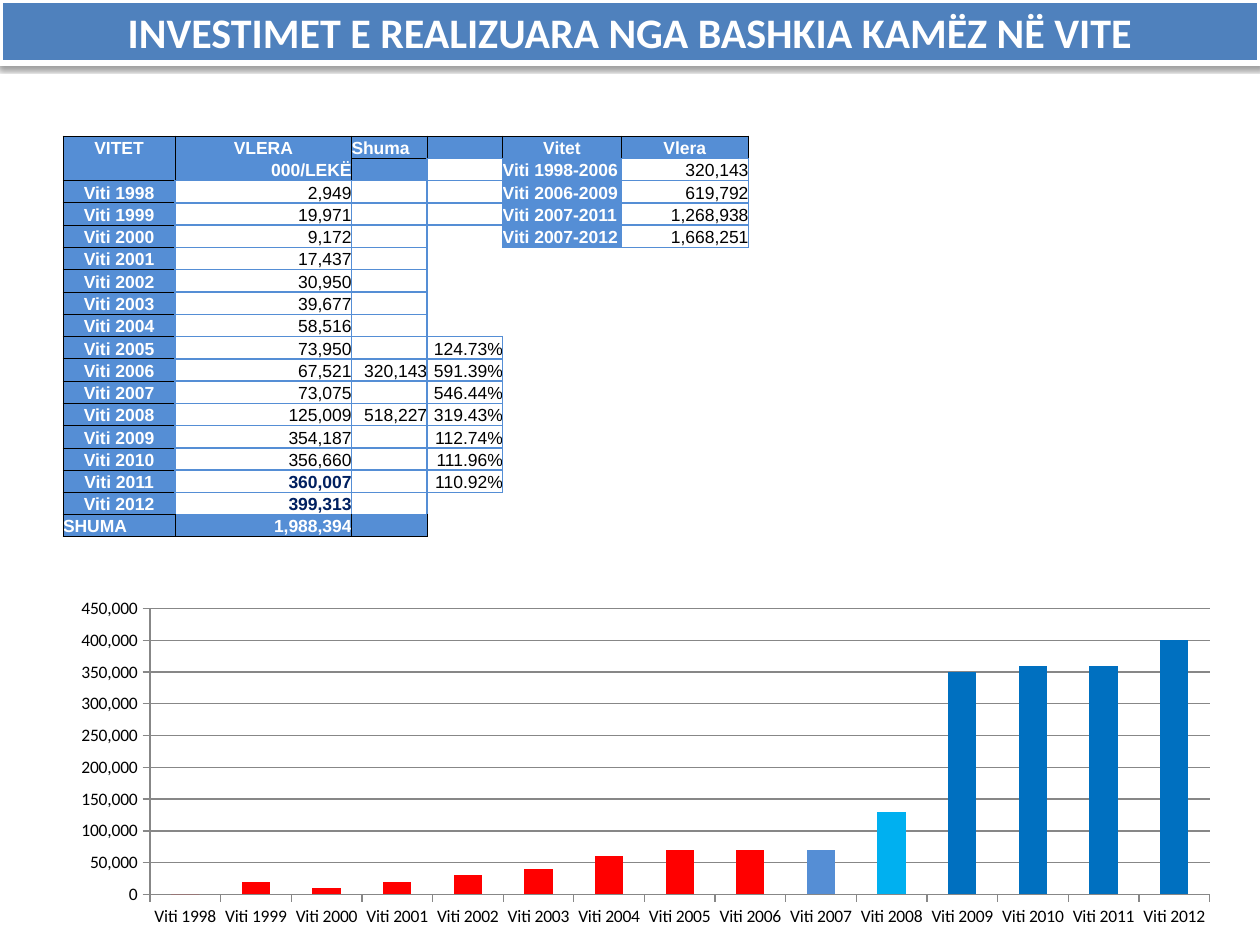
from lxml import etree
from pptx import Presentation
from pptx.chart.data import CategoryChartData
from pptx.dml.color import RGBColor
from pptx.enum.chart import XL_CHART_TYPE, XL_TICK_MARK
from pptx.enum.shapes import MSO_SHAPE
from pptx.enum.text import MSO_ANCHOR, MSO_AUTO_SIZE, PP_ALIGN
from pptx.oxml import parse_xml
from pptx.oxml.ns import nsdecls, qn
from pptx.util import Inches, Pt

WHITE = RGBColor(0xFF, 0xFF, 0xFF)
BLACK = RGBColor(0, 0, 0)
NAVY = RGBColor(0x00, 0x20, 0x60)
TITLE_BLUE = RGBColor(0x4F, 0x81, 0xBD)
TABLE_BLUE = RGBColor(0x55, 0x8E, 0xD5)
RED = RGBColor(0xFF, 0, 0)
SKY = RGBColor(0x00, 0xB0, 0xF0)
BLUE = RGBColor(0x00, 0x70, 0xC0)
GRAY = RGBColor(0x87, 0x87, 0x87)


def write_text(text_frame, text, size=10, font="Arial", color=BLACK, bold=False, align=PP_ALIGN.LEFT):
    paragraph = text_frame.paragraphs[0]
    paragraph.alignment = align
    if not text:
        end = etree.SubElement(paragraph._p, qn("a:endParaRPr"))
        end.set("sz", str(size * 100))
        return
    run = paragraph.add_run()
    run.text = text
    run.font.size = Pt(size)
    run.font.name = font
    run.font.bold = bold
    run.font.color.rgb = color


def set_borders(cell, edges):
    properties = cell._tc.get_or_add_tcPr()
    for position, side in enumerate(side for side in "LRTB" if side in edges):
        color = edges[side]
        width = Pt(0.5) if color == BLACK else Pt(1)
        paint = f'<a:solidFill><a:srgbClr val="{color}"/></a:solidFill>' if color else "<a:noFill/>"
        properties.insert(position, parse_xml(
            f'<a:ln{side} {nsdecls("a")} w="{width}">{paint}</a:ln{side}>'))


presentation = Presentation()
presentation.slide_width = Inches(10)
presentation.slide_height = Inches(7.5)
slide = presentation.slides.add_slide(presentation.slide_layouts[6])

values = [2949, 19971, 9172, 17437, 30950, 39677, 58516, 73950, 67521,
          73075, 125009, 354187, 356660, 360007, 399313]
years = [f"Viti {1998 + index}" for index in range(len(values))]
sums = {"Viti 2006": "320,143", "Viti 2008": "518,227"}
percents = ["124.73%", "591.39%", "546.44%", "319.43%", "112.74%", "111.96%", "110.92%"]
periods = [("Viti 1998-2006", "320,143"), ("Viti 2006-2009", "619,792"),
           ("Viti 2007-2011", "1,268,938"), ("Viti 2007-2012", "1,668,251")]

rows = [["VITET", "VLERA", "Shuma", "", "Vitet", "Vlera"], ["", "000/LEKË", "", "", "", ""]]
rows += [[year, f"{value:,}", sums.get(year, ""), "", "", ""] for year, value in zip(years, values)]
rows.append(["SHUMA", "1,988,394", "", "", "", ""])
for row, period in enumerate(periods, 1):
    rows[row][4:] = period
for row, percent in enumerate(percents, 9):
    rows[row][3] = percent
last = len(rows) - 1

table_frame = slide.shapes.add_table(len(rows), 6, Inches(0.5), Inches(1.08), Inches(5.44), Inches(3.18))
table = table_frame.table
table.first_row = False
table.horz_banding = False
style = table._tbl.tblPr.find(qn("a:tableStyleId"))
style.text = "{2D5ABB26-0587-4C30-8999-92F81FD0307C}"
for column, width in zip(table.columns, (0.89, 1.4, 0.6, 0.6, 0.94, 1.01)):
    column.width = Inches(width)
for table_row in table.rows:
    table_row.height = Inches(3.01) // last
table.rows[last].height = Inches(0.17)

for row, texts in enumerate(rows):
    for column, text in enumerate(texts):
        cell = table.cell(row, column)
        cell.margin_left = cell.margin_right = cell.margin_top = cell.margin_bottom = 0
        cell.vertical_anchor = MSO_ANCHOR.BOTTOM
        boxed = column < 3 or row < 5 or (column == 3 and 9 <= row <= 15)
        heading = boxed and (row in (0, last) or column == 0
                             or (row == 1 and column < 3) or column == 4)
        latest = column == 1 and row in (15, 16)

        if (column == 0 and row < last) or (row == 0 and column != 2):
            align = PP_ALIGN.CENTER
        elif column == 4 or row == 0 or column == 0:
            align = PP_ALIGN.LEFT
        else:
            align = PP_ALIGN.RIGHT
        color = WHITE if heading else NAVY if latest else BLACK
        write_text(cell.text_frame, text, color=color, bold=heading or latest, align=align)

        if heading:
            cell.fill.solid()
            cell.fill.fore_color.rgb = TABLE_BLUE
        elif boxed and (column in (1, 5) or text.endswith("%")):
            cell.fill.solid()
            cell.fill.fore_color.rgb = WHITE
        else:
            cell.fill.background()

        if not boxed:
            continue
        dark = row in (0, last) or column == 0 or (row == 1 and column < 3)
        edges = dict.fromkeys("LRTB", BLACK if dark else TABLE_BLUE)
        if row == 0:
            if column < 2:
                del edges["B"]
            elif column > 2:
                edges["B"] = TABLE_BLUE
        elif row == 1 and column < 2:
            del edges["T"]
        if row == 1 and column in (1, 2):
            edges["B"] = TABLE_BLUE
        if (row == 1 and column == 2) or (column == 0 and 2 <= row < last):
            edges["R"] = TABLE_BLUE
        if row == last and column:
            edges["T"] = TABLE_BLUE
        if (row, column) == (4, 3):
            edges["B"] = None
        set_borders(cell, edges)

chart_width, chart_height = 9.22, 2.83
chart_data = CategoryChartData(number_format="#,##0")
chart_data.categories = years
chart_data.add_series("Series 1", [round(value, -4) for value in values])
chart = slide.shapes.add_chart(XL_CHART_TYPE.COLUMN_STACKED, Inches(0.42), Inches(4.67),
                               Inches(chart_width), Inches(chart_height), chart_data).chart
chart.has_legend = False
chart.has_title = False
chart.font.size = Pt(10)
chart.font.name = "Calibri"
chart.font.color.rgb = BLACK
plot = chart.plots[0]
plot.vary_by_categories = False
plot.gap_width = 150
plot.overlap = 100
series = plot.series[0]
series.format.fill.solid()
series.format.fill.fore_color.rgb = RED
for index, color in enumerate((TABLE_BLUE, SKY, BLUE, BLUE, BLUE, BLUE), 9):
    fill = series.points[index].format.fill
    fill.solid()
    fill.fore_color.rgb = color
for axis in (chart.category_axis, chart.value_axis):
    axis.major_tick_mark = XL_TICK_MARK.OUTSIDE
    axis.format.line.color.rgb = GRAY
value_axis = chart.value_axis
value_axis.minimum_scale = 0
value_axis.maximum_scale = 450000
value_axis.major_unit = 50000
value_axis.tick_labels.number_format = "#,##0"
value_axis.tick_labels.number_format_is_linked = False
value_axis.has_major_gridlines = True
value_axis.major_gridlines.format.line.color.rgb = GRAY

plot_area = chart._chartSpace.chart.plotArea
for old_layout in plot_area.findall(qn("c:layout")):
    plot_area.remove(old_layout)
plot_area.insert(0, parse_xml(
    f'<c:layout {nsdecls("c")}><c:manualLayout><c:layoutTarget val="inner"/>'
    '<c:xMode val="edge"/><c:yMode val="edge"/>'
    f'<c:x val="{0.77 / chart_width}"/><c:y val="{0.16 / chart_height}"/>'
    f'<c:w val="{8.41 / chart_width}"/><c:h val="{2.27 / chart_height}"/>'
    '</c:manualLayout></c:layout>'))

title = slide.shapes.add_shape(MSO_SHAPE.RECTANGLE, 0, 0, Inches(10), Inches(0.5))
title.fill.solid()
title.fill.fore_color.rgb = TITLE_BLUE
title.line.color.rgb = WHITE
title.line.width = Pt(3)
title.shadow.inherit = False
effects = title._element.spPr.find(qn("a:effectLst"))
effects.append(parse_xml(
    f'<a:outerShdw {nsdecls("a")} blurRad="{Pt(3.1)}" dist="{Pt(1.6)}" dir="5400000" rotWithShape="0">'
    '<a:srgbClr val="000000"><a:alpha val="38000"/></a:srgbClr></a:outerShdw>'))
title.text_frame.word_wrap = True
title.text_frame.auto_size = MSO_AUTO_SIZE.SHAPE_TO_FIT_TEXT
title.text_frame.vertical_anchor = MSO_ANCHOR.MIDDLE
write_text(title.text_frame, "INVESTIMET E REALIZUARA NGA BASHKIA KAMËZ NË VITE",
           size=24, font="Calibri", color=WHITE, bold=True, align=PP_ALIGN.CENTER)

presentation.save("out.pptx")
